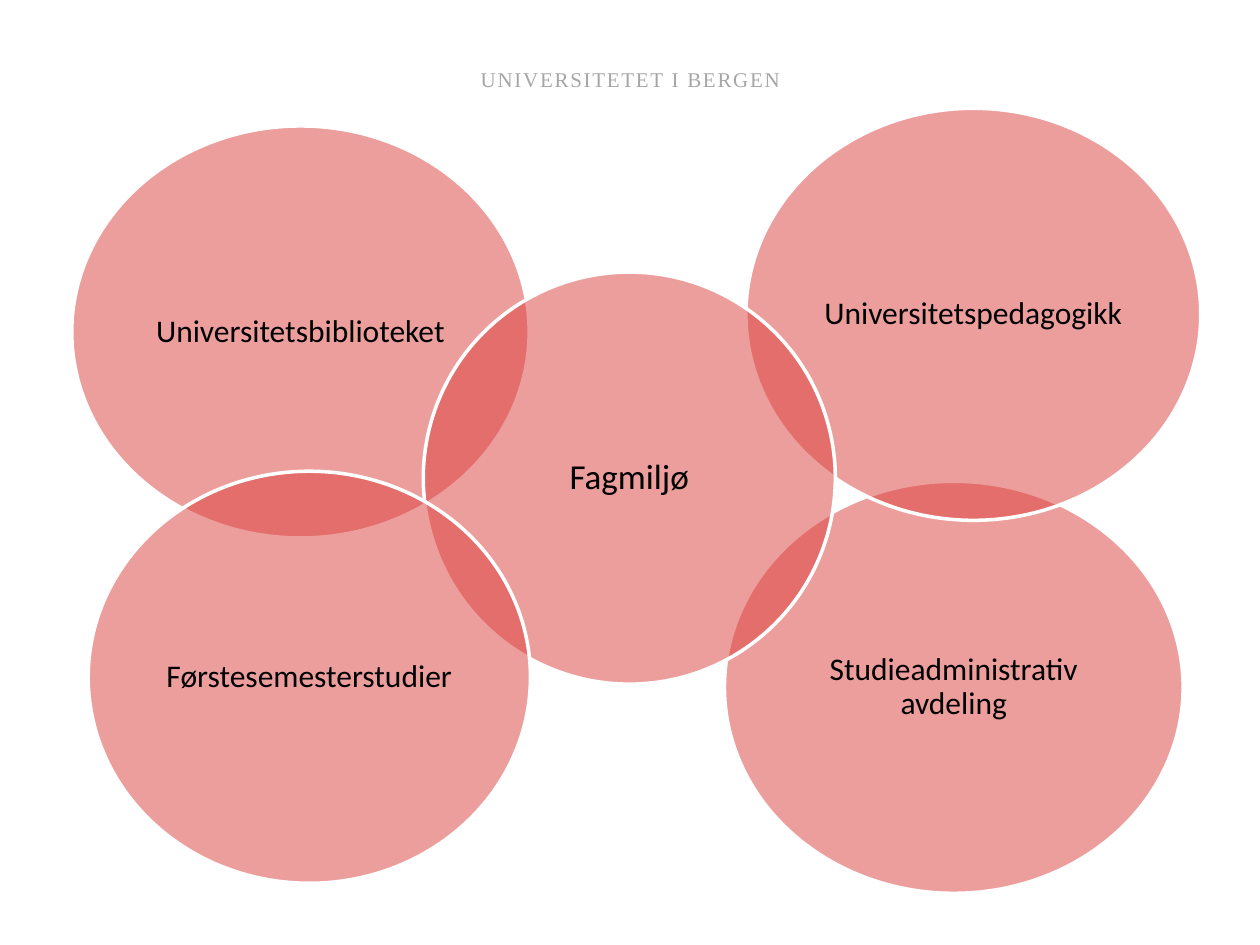
from lxml.etree import SubElement
from pptx import Presentation
from pptx.dml.color import RGBColor
from pptx.enum.shapes import MSO_SHAPE
from pptx.enum.text import MSO_ANCHOR, PP_ALIGN
from pptx.oxml.ns import qn
from pptx.util import Inches, Pt

RED = RGBColor(0xDB, 0x3F, 0x3D)
WHITE = RGBColor(0xFF, 0xFF, 0xFF)
BLACK = RGBColor(0x00, 0x00, 0x00)
GREY = RGBColor(0xA6, 0xA6, 0xA6)

UNITS = [
    ("Universitetsbiblioteket", 0.57, 1.0, 3.63, 18),
    ("Studieadministrativ avdeling", 5.75, 3.82, 3.64, 18),
    ("Universitetspedagogikk", 5.92, 0.86, 3.61, 18),
    ("Fagmiljø", 3.36, 2.16, 3.27, 20),
    ("Førstesemesterstudier", 0.7, 3.74, 3.51, 18),
]
CIRCLE_HEIGHT = 3.27


def write_text(frame, text, font_name, size, color, inset):
    """Fill a text frame with one centred run and return that run."""
    frame.word_wrap = True
    frame.margin_left = frame.margin_right = Inches(inset)
    frame.margin_top = frame.margin_bottom = Inches(inset)
    para = frame.paragraphs[0]
    para.alignment = PP_ALIGN.CENTER
    span = para.add_run()
    span.text = text
    span.font.name = font_name
    span.font.size = Pt(size)
    span.font.color.rgb = color
    return span


def add_header(page, left, top, width, height):
    """Place the letter-spaced university name."""
    box = page.shapes.add_textbox(left, top, width, height)
    span = write_text(box.text_frame, "UNIVERSITETET I BERGEN",
                      "Times New Roman", 12, GREY, 0)
    span.font._element.set("spc", "100")


def add_circle(page, text, size, left, top, width, height):
    """Place one half-transparent ellipse with its label."""
    circle = page.shapes.add_shape(MSO_SHAPE.OVAL, left, top, width, height)
    circle.shadow.inherit = False
    circle.fill.solid()
    circle.fill.fore_color.rgb = RED
    color = circle.fill._xPr.find(qn("a:solidFill"))[0]
    SubElement(color, qn("a:alpha")).set("val", "50000")
    circle.line.color.rgb = WHITE
    circle.line.width = Pt(2)
    frame = circle.text_frame
    frame.vertical_anchor = MSO_ANCHOR.MIDDLE
    write_text(frame, text, "Calibri", size, BLACK, 0.07)
    frame.paragraphs[0].line_spacing = 0.9


def main():
    """Build the slide and save the deck."""
    deck = Presentation()
    deck.slide_width, deck.slide_height = Inches(10), Inches(7.5)
    page = deck.slides.add_slide(deck.slide_layouts[6])
    add_header(page, Inches(1.54), Inches(0.53), Inches(6.93), Inches(0.59))
    for text, left, top, width, size in UNITS:
        add_circle(page, text, size, Inches(left), Inches(top),
                   Inches(width), Inches(CIRCLE_HEIGHT))
    deck.save("out.pptx")


if __name__ == "__main__":
    main()
